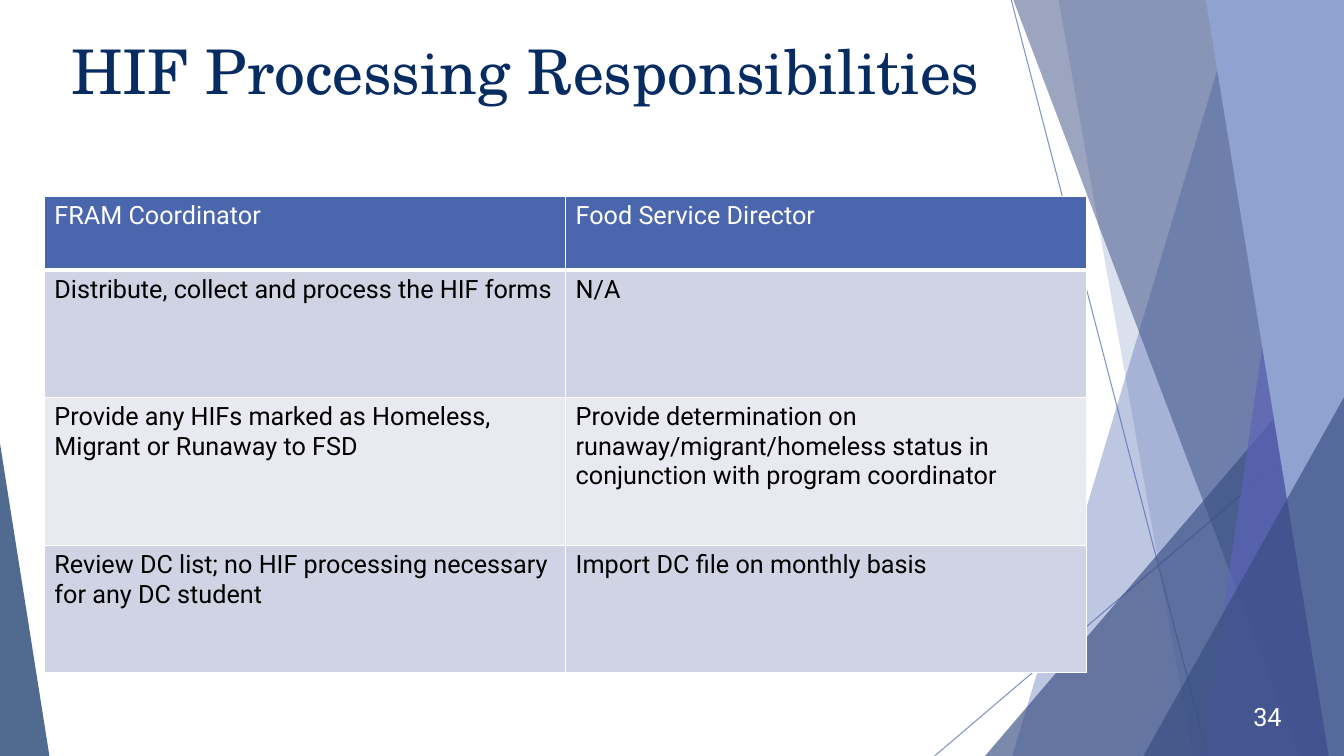
from pptx import Presentation
from pptx.dml.color import RGBColor
from pptx.enum.shapes import MSO_CONNECTOR, MSO_SHAPE
from pptx.enum.text import MSO_ANCHOR, PP_ALIGN
from pptx.oxml.ns import qn
from pptx.util import Pt
from lxml import etree

STRAIGHT = MSO_CONNECTOR.STRAIGHT
TRIANGLE = MSO_SHAPE.ISOSCELES_TRIANGLE
TOP, MIDDLE = MSO_ANCHOR.TOP, MSO_ANCHOR.MIDDLE
LEFT, RIGHT = PP_ALIGN.LEFT, PP_ALIGN.RIGHT

WHITE = RGBColor(0xFF, 0xFF, 0xFF)
BLACK = RGBColor(0x00, 0x00, 0x00)
NAVY = RGBColor(0x07, 0x2C, 0x62)
BLUE = RGBColor(0x4A, 0x66, 0xAC)
DARK_BLUE = RGBColor(0x38, 0x4C, 0x81)
VIOLET = RGBColor(0x5C, 0x64, 0xB7)
LIGHT_BLUE = RGBColor(0x90, 0xA2, 0xCF)
BAND_DARK = RGBColor(0xD0, 0xD3, 0xE3)
BAND_LIGHT = RGBColor(0xE9, 0xEA, 0xF1)

BODY_FONT, TITLE_FONT = "Roboto", "TeX Gyre Schola"
PX = 9144  # EMU in one px, 100 px to the inch
WIDTH, HEIGHT = 1333, 750

# Content
TITLE = "HIF Processing Responsibilities"
PAGE_NUMBER = "34"
DUTIES = [
    ("FRAM Coordinator", "Food Service Director"),
    ("Distribute, collect and process the HIF forms", "N/A"),
    ("Provide any HIFs marked as Homeless, Migrant or Runaway to FSD",
     "Provide determination on runaway/migrant/homeless status in "
     "conjunction with program coordinator"),
    ("Review DC list; no HIF processing necessary for any DC student",
     "Import DC file on monthly basis"),
]
ROW_HEIGHTS = [73, 126, 147, 126]
COLUMN_WIDTH = 517
TABLE_LEFT, TABLE_TOP = 44, 195

# Backdrop: lines as start and end; bands as top x, bottom x, reaching the
# right edge; triangles as left, top, width, apex position
LINES = [(1003, 0, 1198, HEIGHT), (WIDTH, 404, 927, HEIGHT)]
BACKDROP = [
    ("band", (1228, 1004), BLUE, 36),
    ("band", (1050, 1183), BLUE, 20),
    ("triangle", (977, 334, 356, 1), DARK_BLUE, 66),
    ("band", (1005, 1289), DARK_BLUE, 50),
    ("band", (1303, 1192), VIOLET, 70),
    ("band", (1196, 1318), LIGHT_BLUE, 100),
    ("triangle", (1134, 394, 199, 1), DARK_BLUE, 66),
    ("triangle", (0, 440, 49, 0), NAVY, 70),
]


def px(*lengths):
    return [length * PX for length in lengths]


def set_opacity(shape, percent):
    color = next(shape._element.iter(qn("a:srgbClr")))
    etree.SubElement(color, qn("a:alpha"), val=str(percent * 1000))


def add_line(page, ends):
    line = page.shapes.add_connector(STRAIGHT, *px(*ends))
    line.line.color.rgb = BLUE
    line.line.width = Pt(0.75)
    set_opacity(line, 70)
    etree.SubElement(line._element.spPr, qn("a:effectLst"))


def add_backdrop_part(page, kind, place, color, opacity):
    if kind == "band":
        top_x, bottom_x = place
        outline = page.shapes.build_freeform(top_x, 0, scale=PX)
        outline.add_line_segments(
            [(WIDTH, 0), (WIDTH, HEIGHT), (bottom_x, HEIGHT)], close=True)
        shape = outline.convert_to_shape()
    else:
        left, top, width, apex = place
        shape = page.shapes.add_shape(
            TRIANGLE, *px(left, top, width, HEIGHT - top))
        shape.adjustments[0] = apex
    shape.shadow.inherit = False
    shape.fill.solid()
    shape.fill.fore_color.rgb = color
    shape.line.fill.background()
    if opacity < 100:
        set_opacity(shape, opacity)


def write(frame, text, size=18, font=BODY_FONT, color=BLACK, align=LEFT,
          anchor=TOP):
    frame.word_wrap = True
    frame.vertical_anchor = anchor
    para = frame.paragraphs[0]
    para.alignment = align
    span = para.add_run()
    span.text = text
    span.font.size = Pt(size)
    span.font.name = font
    span.font.color.rgb = color


def add_borders(cell, bottom_width):
    properties = cell._tc.get_or_add_tcPr()
    for side, width in (("L", 1), ("R", 1), ("T", 1), ("B", bottom_width)):
        border = etree.SubElement(
            properties, qn(f"a:ln{side}"), w=str(Pt(width)))
        fill = etree.SubElement(border, qn("a:solidFill"))
        etree.SubElement(fill, qn("a:srgbClr"), val=str(WHITE))


def add_duties_table(page):
    columns = len(DUTIES[0])
    table = page.shapes.add_table(
        len(DUTIES), columns,
        *px(TABLE_LEFT, TABLE_TOP, columns * COLUMN_WIDTH, sum(ROW_HEIGHTS)),
    ).table
    for column in table.columns:
        column.width = COLUMN_WIDTH * PX
    for index, (duties, height) in enumerate(zip(DUTIES, ROW_HEIGHTS)):
        row = table.rows[index]
        row.height = height * PX
        is_header = index == 0
        band = BAND_DARK if index % 2 else BAND_LIGHT
        for cell, duty in zip(row.cells, duties):
            add_borders(cell, 3 if is_header else 1)
            cell.fill.solid()
            cell.fill.fore_color.rgb = BLUE if is_header else band
            write(cell.text_frame, duty, color=WHITE if is_header else BLACK)


def main():
    deck = Presentation()
    deck.slide_width, deck.slide_height = px(WIDTH, HEIGHT)
    page = deck.slides.add_slide(deck.slide_layouts[6])

    # Backdrop
    for ends in LINES:
        add_line(page, ends)
    for part in BACKDROP:
        add_backdrop_part(page, *part)

    # Page number and title
    number_box = page.shapes.add_textbox(*px(1206, 691, 75, 40))
    write(number_box.text_frame, PAGE_NUMBER, color=WHITE, align=RIGHT,
          anchor=MIDDLE)
    title_box = page.shapes.add_textbox(*px(61, 28, 940, 144))
    write(title_box.text_frame, TITLE, size=44, font=TITLE_FONT, color=NAVY)

    # Responsibilities
    add_duties_table(page)
    deck.save("out.pptx")


if __name__ == "__main__":
    main()
